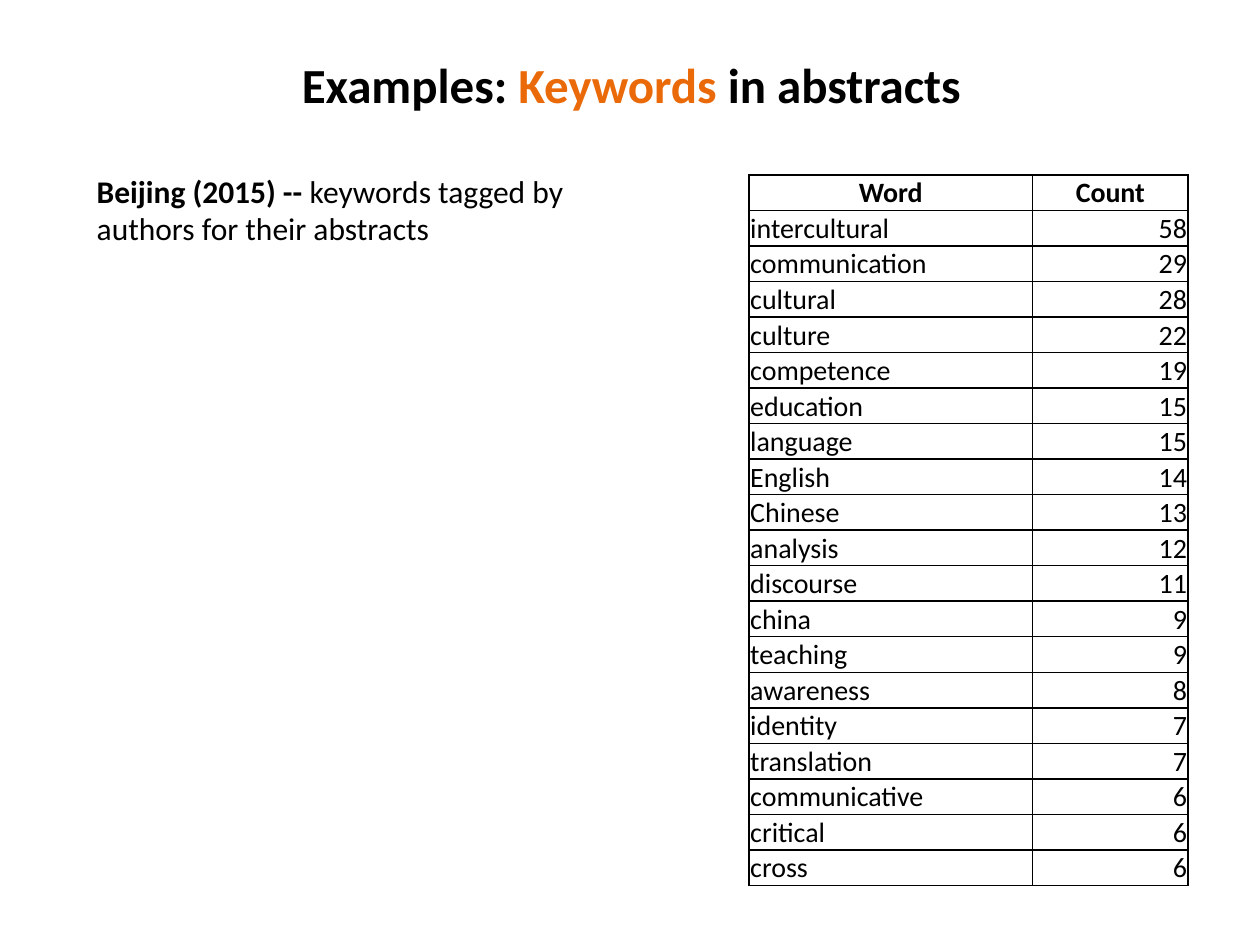
"""Build a slide that lists the most frequent abstract keywords in a table."""
from lxml.etree import SubElement
from pptx import Presentation
from pptx.dml.color import RGBColor
from pptx.enum.text import MSO_ANCHOR, MSO_AUTO_SIZE, PP_ALIGN
from pptx.oxml.ns import qn
from pptx.util import Pt

KEYWORDS = [
    ("intercultural", 58), ("communication", 29), ("cultural", 28),
    ("culture", 22), ("competence", 19), ("education", 15),
    ("language", 15), ("English", 14), ("Chinese", 13), ("analysis", 12),
    ("discourse", 11), ("china", 9), ("teaching", 9), ("awareness", 8),
    ("identity", 7), ("translation", 7), ("communicative", 6),
    ("critical", 6), ("cross", 6),
]
BLACK = "000000"
ORANGE = "EA6908"


def color(value):
    return RGBColor.from_string(value)


def add_span(para, text, *, font="Calibri", size=16, bold=False, fill=BLACK):
    span = para.add_run()
    span.text = text
    span.font.name = font
    span.font.size = Pt(size)
    span.font.bold = bold
    span.font.color.rgb = color(fill)


class SlideBuilder:
    def __init__(self, page, font="Calibri", border=BLACK):
        self.page = page
        self.font = font
        self.border = border

    def place(self, shape, left, top, width, height):
        shape.left, shape.top = Pt(left), Pt(top)
        shape.width, shape.height = Pt(width), Pt(height)

    def title(self, spans, bounds, size):
        box = self.page.shapes.title
        self.place(box, *bounds)
        box.text_frame.vertical_anchor = MSO_ANCHOR.MIDDLE
        para = box.text_frame.paragraphs[0]
        para.alignment = PP_ALIGN.CENTER
        for text, fill in spans:
            add_span(para, text, font=self.font, size=size, bold=True, fill=fill)

    def text(self, spans, bounds, size):
        box = self.page.shapes.add_textbox(*map(Pt, bounds))
        box.text_frame.word_wrap = True
        box.text_frame.auto_size = MSO_AUTO_SIZE.SHAPE_TO_FIT_TEXT
        for text, bold in spans:
            add_span(box.text_frame.paragraphs[0], text,
                     font=self.font, size=size, bold=bold)

    def table(self, header, rows, left, top, widths, row_height):
        records = [header, *rows]
        frame = self.page.shapes.add_table(
            len(records), len(header), Pt(left), Pt(top),
            Pt(sum(widths)), Pt(row_height * len(records)))
        table = frame.table
        table.first_row = table.horz_banding = False
        for column, width in zip(table.columns, widths):
            column.width = Pt(width)
        for row, record in zip(table.rows, records):
            row.height = Pt(row_height)
            is_header = record is header
            for cell, value, align in zip(row.cells, record,
                                          (PP_ALIGN.LEFT, PP_ALIGN.RIGHT)):
                self.cell(cell, str(value), is_header,
                          PP_ALIGN.CENTER if is_header else align)

    def cell(self, cell, text, is_header, align):
        cell.margin_left = cell.margin_right = cell.margin_top = Pt(0.72)
        cell.margin_bottom = 0
        cell.vertical_anchor = MSO_ANCHOR.MIDDLE if is_header else MSO_ANCHOR.TOP
        para = cell.text_frame.paragraphs[0]
        para.alignment = align
        add_span(para, text, font=self.font, bold=is_header)
        properties = cell._tc.get_or_add_tcPr()
        for edge in ("a:lnL", "a:lnR", "a:lnT", "a:lnB"):
            line = SubElement(properties, qn(edge), w=str(Pt(1)))
            fill = SubElement(line, qn("a:solidFill"))
            SubElement(fill, qn("a:srgbClr"), val=self.border)
        cell.fill.background()


def main():
    deck = Presentation()
    deck.slide_width, deck.slide_height = Pt(720), Pt(540)
    builder = SlideBuilder(deck.slides.add_slide(deck.slide_layouts[5]))
    builder.title(
        [("Examples: ", BLACK), ("Keywords ", ORANGE), ("in abstracts", BLACK)],
        (36.7, 26, 648, 44), size=28)
    builder.table(("Word", "Count"), KEYWORDS, left=428, top=100,
                  widths=(162, 89), row_height=20.3)
    builder.text(
        [("Beijing (2015) -- ", True),
         ("keywords tagged by authors for their abstracts", False)],
        (48.2, 94.5, 323, 51), size=18)
    deck.save("out.pptx")


if __name__ == "__main__":
    main()
